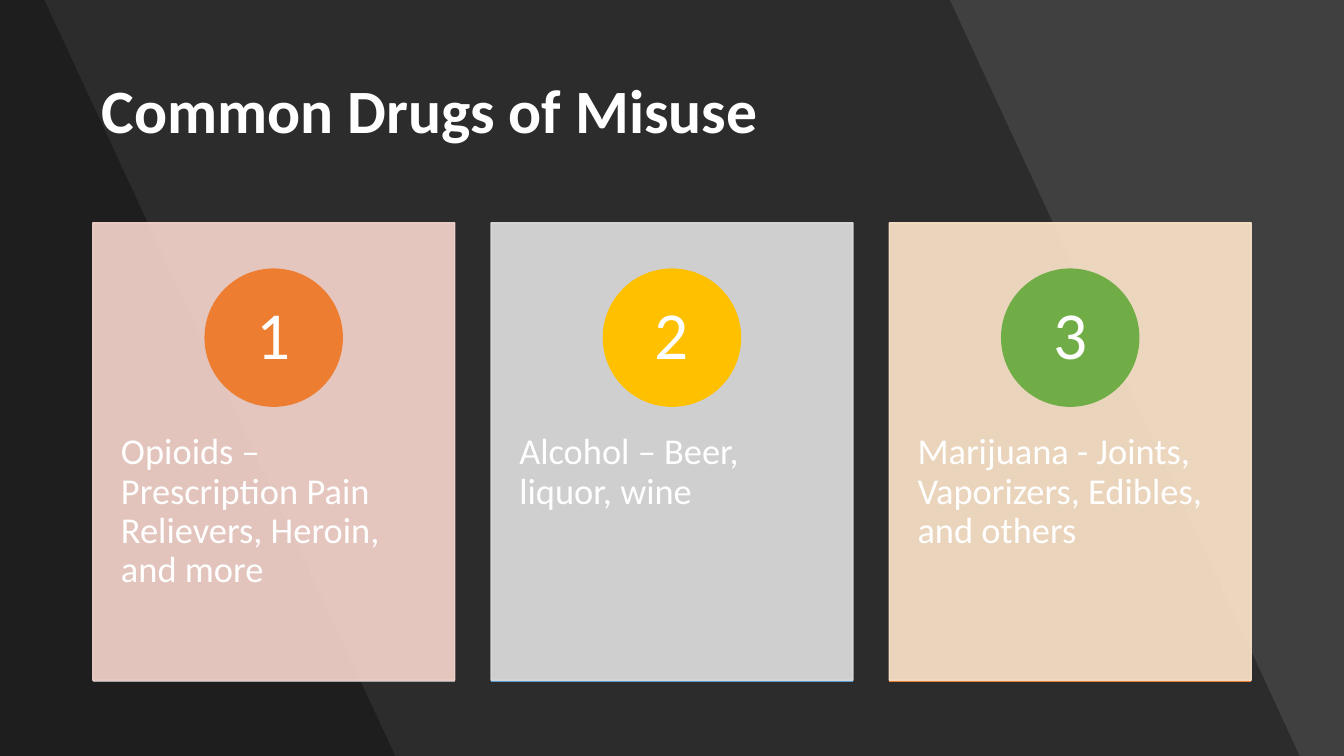
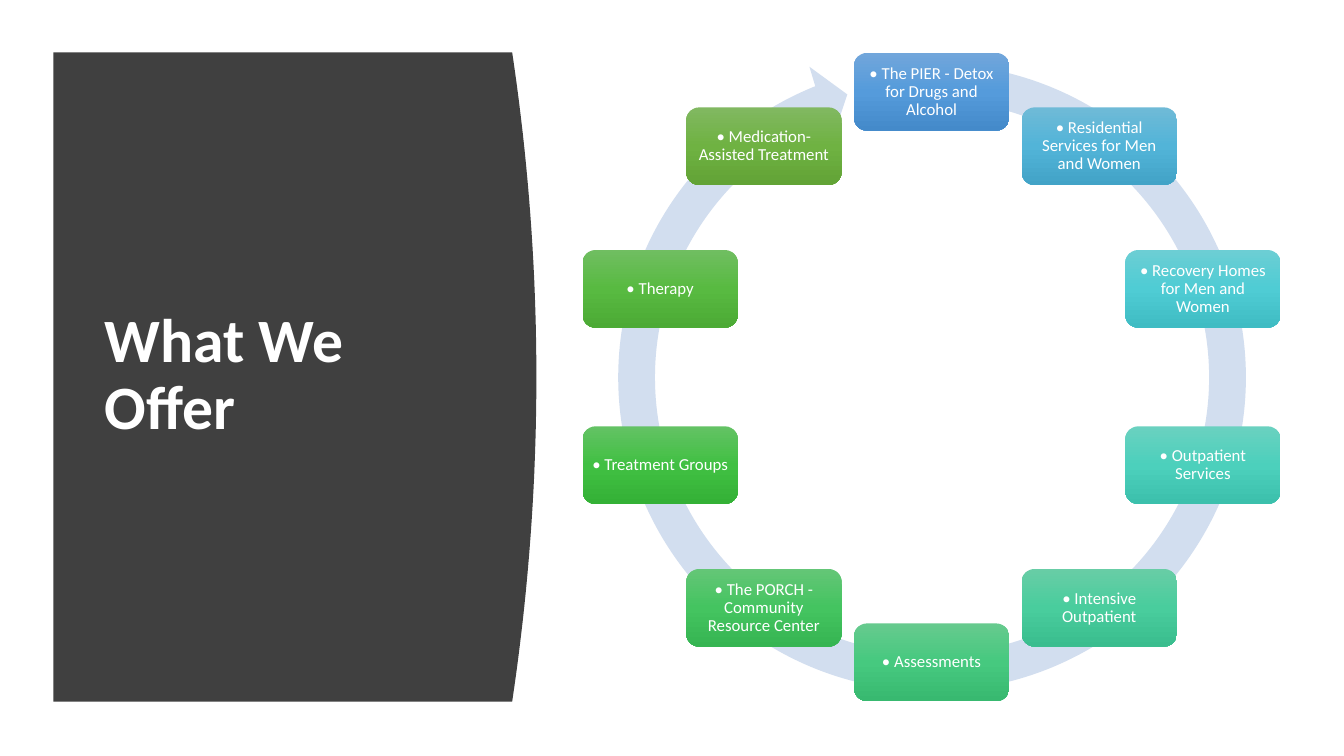
import copy
import math

import pptx
import pptx.dml.color
import pptx.enum.shapes
import pptx.enum.text
import pptx.oxml.ns
import pptx.util
from lxml import etree

FONT = "Calibri"
WHITE, BLACK, CHARCOAL, RING_BLUE = "FFFFFF", "000000", "404040", "D2DEEF"
WIDTH, HEIGHT = 13.33, 7.5

# Text, card colour, circle colour, base line colour
DRUGS = [
    ("Opioids – Prescription Pain Relievers, Heroin, and more", "F8D7CE", "ED7D31", "A5A5A5"),
    ("Alcohol – Beer, liquor, wine", "E1E1E1", "FFC000", "5B9BD5"),
    ("Marijuana - Joints, Vaporizers, Edibles, and others", "FFE8CC", "70AD47", "ED7D31"),
]

# Clockwise from the top: text, gradient from top to bottom
SERVICES = [
    ("The PIER - Detox for Drugs and Alcohol", ("71A6DB", "559BDB", "448ACA")),
    ("Residential Services for Men and Women", ("6FBAD7", "52B4D8", "42A3C7")),
    ("Recovery Homes for Men and Women", ("6CCED4", "4FCCD4", "3FBCC3")),
    ("Outpatient Services", ("6AD1C0", "4CD0BC", "3CC0AC")),
    ("Intensive Outpatient", ("68CDA6", "49CD9D", "3ABD8E")),
    ("Assessments", ("66CA8E", "46C97F", "38B970")),
    ("The PORCH - Community Resource Center", ("64C677", "44C460", "36B552")),
    ("Treatment Groups", ("63C264", "41C043", "34B136")),
    ("Therapy", ("70BE61", "58BA41", "4CAA35")),
    ("Medication-Assisted Treatment", ("81B861", "6FB242", "62A336")),
]

SHAPES = pptx.enum.shapes.MSO_SHAPE
ANCHOR = pptx.enum.text.MSO_ANCHOR
ALIGN = pptx.enum.text.PP_ALIGN
qn = pptx.oxml.ns.qn
inches = pptx.util.Inches


def rgb(value):
    return pptx.dml.color.RGBColor.from_string(value)


def paint(fill, colour):
    fill.solid()
    fill.fore_color.rgb = rgb(colour)


def set_opacity(shape, percent):
    """Apply one opacity to every colour of the shape's fill and line."""
    for colour in shape._element.spPr.iter(qn("a:srgbClr")):
        etree.SubElement(colour, qn("a:alpha")).set("val", str(percent * 1000))


def paint_gradient(shape, colours):
    """Spread the colours evenly from top to bottom."""
    shape.fill.gradient()
    shape.fill.gradient_angle = 270
    stop_list = shape._element.spPr.find(".//" + qn("a:gsLst"))
    while len(stop_list) < len(colours):
        stop_list.append(copy.deepcopy(stop_list[0]))
    for index, (stop, colour) in enumerate(zip(shape.fill.gradient_stops, colours)):
        stop.position = index / (len(colours) - 1)
        stop.color.rgb = rgb(colour)


def write(shape, text, size, insets=(0.1, 0.05), top=None, bold=False,
          align=ALIGN.CENTER, anchor=ANCHOR.MIDDLE):
    frame = shape.text_frame
    frame.word_wrap = True
    frame.vertical_anchor = anchor
    frame.margin_left = frame.margin_right = inches(insets[0])
    frame.margin_bottom = inches(insets[1])
    frame.margin_top = inches(insets[1] if top is None else top)
    paragraph = frame.paragraphs[0]
    paragraph.text = text
    paragraph.alignment = align
    paragraph.line_spacing = 0.9
    font = paragraph.font
    font.name, font.size, font.bold = FONT, pptx.util.Pt(size), bold
    font.color.rgb = rgb(WHITE)


def add_shape(slide, kind, box, colour=None, outlined=False):
    shape = slide.shapes.add_shape(kind, *map(inches, box))
    shape.shadow.inherit = False
    if colour:
        paint(shape.fill, colour)
    if outlined:
        paint(shape.line.fill, colour)
        shape.line.width = pptx.util.Pt(1)
    else:
        shape.line.fill.background()
    return shape


def add_polygon(slide, points, colour):
    corners = [(inches(x), inches(y)) for x, y in points]
    builder = slide.shapes.build_freeform(*corners[0])
    builder.add_line_segments(corners[1:], close=True)
    shape = builder.convert_to_shape()
    shape.shadow.inherit = False
    paint(shape.fill, colour)
    shape.line.fill.background()
    return shape


def add_line(slide, x1, x2, y, colour):
    line = slide.shapes.add_connector(
        pptx.enum.shapes.MSO_CONNECTOR.STRAIGHT, *map(inches, (x1, y, x2, y)))
    etree.SubElement(line._element.spPr, qn("a:effectLst"))
    line.line.width = pptx.util.Pt(1)
    line.line.color.rgb = rgb(colour)


def add_slide(presentation, background):
    slide = presentation.slides.add_slide(presentation.slide_layouts[6])
    paint(slide.background.fill, background)
    return slide


def add_title(slide, text, box):
    title = slide.shapes.add_textbox(*map(inches, box))
    write(title, text, 44, bold=True, align=ALIGN.LEFT)


def build_drugs(presentation):
    slide = add_slide(presentation, CHARCOAL)
    for top_right, bottom_right in ((9.42, 12.89), (0.44, 3.92)):
        band = add_polygon(slide, [(0, 0), (top_right, 0), (bottom_right, HEIGHT), (0, HEIGHT)], BLACK)
        set_opacity(band, 30)
    add_title(slide, "Common Drugs of Misuse", (0.91, 0.4, 11.51, 1.45))

    left, top, width, height, pitch = 0.92, 2.21, 3.59, 4.54, 3.95
    diameter = 1.36
    for index, (text, card_colour, circle_colour, base_colour) in enumerate(DRUGS):
        x = left + index * pitch
        card = add_shape(slide, SHAPES.RECTANGLE, (x, top, width, height), card_colour, outlined=True)
        set_opacity(card, 90)
        write(card, text, 26, (0.28, 0.36), top=2.09, align=ALIGN.LEFT, anchor=ANCHOR.TOP)
        circle_box = (x + (width - diameter) / 2, top + 0.46, diameter, diameter)
        circle = add_shape(slide, SHAPES.OVAL, circle_box, circle_colour, outlined=True)
        write(circle, str(index + 1), 48, (0.11, 0.01))
        add_line(slide, x, x + width, top + height + 0.01, base_colour)


def build_services(presentation):
    slide = add_slide(presentation, WHITE)
    left, edge, bulge, top, bottom = 0.53, 5.08, 0.24, 0.52, 6.96
    steps = 40
    curve = []
    for step in range(steps + 1):
        share = step / steps
        curve.append((edge + bulge * (1 - (2 * share - 1) ** 2), top + share * (bottom - top)))
    add_polygon(slide, [(left, top), *curve, (left, bottom)], CHARCOAL)
    add_title(slide, "What We Offer", (0.94, 1.11, 3.74, 5.24))

    arrow = add_shape(slide, SHAPES.CIRCULAR_ARROW, (5.93, 0.43, 6.63, 6.63), RING_BLUE)
    for index, value in enumerate((0.055, 3.307, 148.693, 167.503, 0.058)):
        arrow.adjustments[index] = value

    centre_x, centre_y, radius = 9.24, 3.74, 2.83
    width, height = 1.54, 0.77
    for index, (text, colours) in enumerate(SERVICES):
        angle = 2 * math.pi * index / len(SERVICES)
        x = centre_x + radius * math.sin(angle) - width / 2
        y = centre_y - radius * math.cos(angle) - height / 2
        step_box = add_shape(slide, SHAPES.ROUNDED_RECTANGLE, (x, y, width, height))
        paint_gradient(step_box, colours)
        write(step_box, "• " + text, 12, (0.05, 0.05))


def main():
    presentation = pptx.Presentation()
    presentation.slide_width, presentation.slide_height = inches(WIDTH), inches(HEIGHT)
    build_drugs(presentation)
    build_services(presentation)
    presentation.save("out.pptx")


if __name__ == "__main__":
    main()
